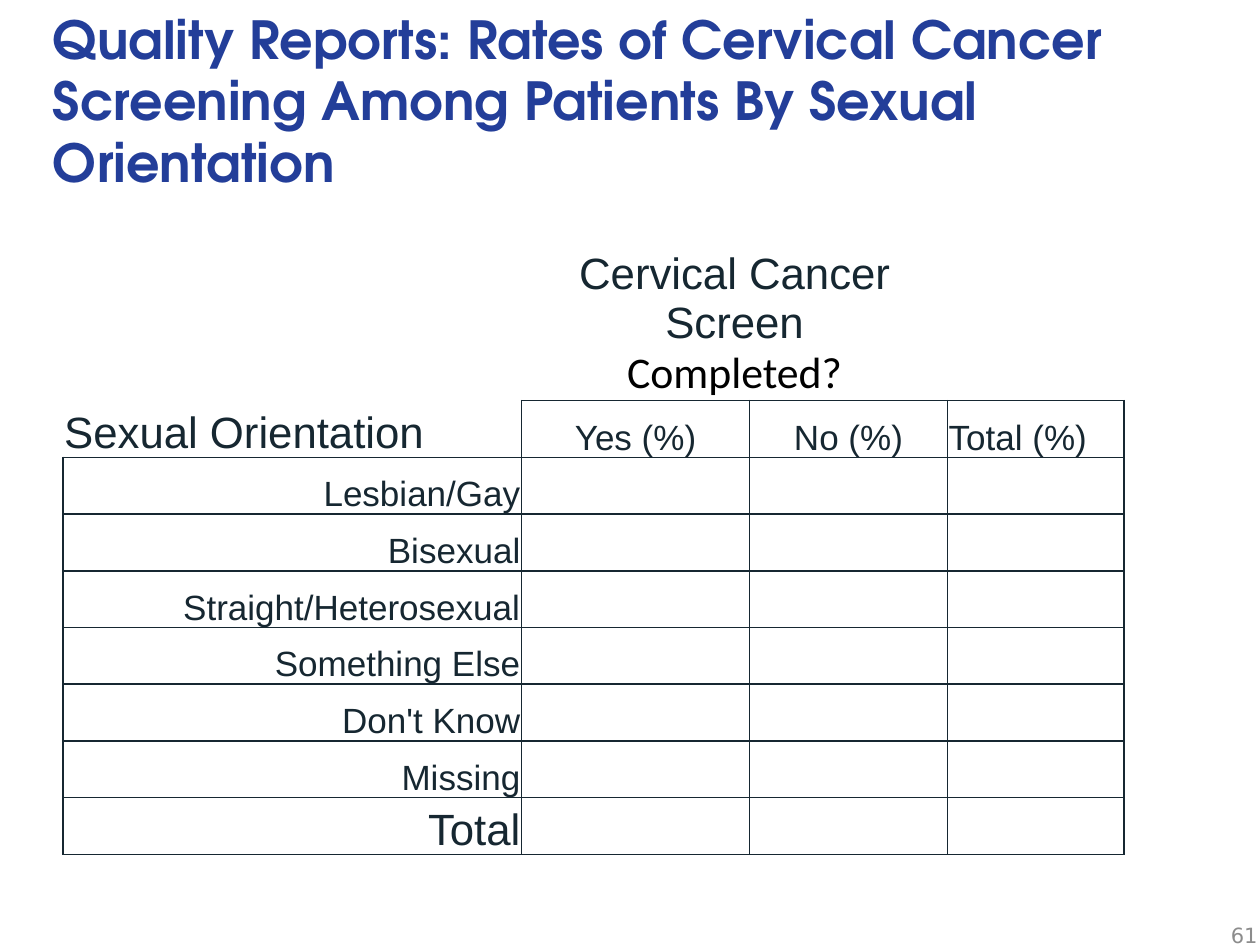
from lxml import etree
from pptx import Presentation
from pptx.dml.color import RGBColor
from pptx.enum.text import MSO_ANCHOR, MSO_AUTO_SIZE, PP_ALIGN
from pptx.oxml.ns import qn
from pptx.util import Inches, Pt

LEFT, CENTER, RIGHT = PP_ALIGN.LEFT, PP_ALIGN.CENTER, PP_ALIGN.RIGHT
BOTTOM = MSO_ANCHOR.BOTTOM
NO_AUTOFIT = MSO_AUTO_SIZE.NONE
TITLE_ONLY = 5
NO_TABLE_STYLE = "{2D5ABB26-0587-4C30-8999-92F81FD0307C}"

INK = "162731"
COLUMNS = (3.64, 1.81, 1.57, 1.4)
HEADER_HEIGHT, ROW_HEIGHT = 1.2, 0.45
HEADINGS = ("Yes (%)", "No (%)", "Total (%)")
ORIENTATIONS = ("Lesbian/Gay", "Bisexual", "Straight/Heterosexual",
                "Something Else", "Don't Know", "Missing", "Total")


def color(hex_string):
    return RGBColor.from_string(hex_string)


def style(paragraph, size, font_name, hex_string, bold=False, align=LEFT):
    paragraph.alignment = align
    font = paragraph.font
    font.size, font.name, font.bold = Pt(size), font_name, bold
    font.color.rgb = color(hex_string)


def add_title(slide, left, top, width, height):
    title = slide.shapes.title
    title.left, title.top = Inches(left), Inches(top)
    title.width, title.height = Inches(width), Inches(height)
    frame = title.text_frame
    frame.text = ("Quality Reports: Rates of Cervical Cancer Screening "
                  "Among Patients By Sexual Orientation")
    frame.word_wrap, frame.auto_size = True, NO_AUTOFIT
    frame.vertical_anchor = BOTTOM
    frame.margin_left = frame.margin_right = 0
    paragraph = frame.paragraphs[0]
    paragraph.line_spacing, paragraph.space_after = Pt(35), Pt(6)
    style(paragraph, 30, "TeX Gyre Adventor", "233E99", bold=True)


def add_page_number(slide, left, top, width, height):
    box = slide.shapes.add_textbox(Inches(left), Inches(top),
                                   Inches(width), Inches(height))
    box.text_frame.word_wrap = True
    box.text_frame.text = "61"
    style(box.text_frame.paragraphs[0], 12, "DejaVu Sans", "8C8C8C")


def set_borders(cell, sides):
    """Draw 1 pt lines on the named sides (L, R, T, B) and clear the rest."""
    properties = cell._tc.get_or_add_tcPr()
    for side in "LRTB":
        line = etree.SubElement(properties, qn(f"a:ln{side}"), w=str(Pt(1)))
        if side in sides:
            fill = etree.SubElement(line, qn("a:solidFill"))
            etree.SubElement(fill, qn("a:srgbClr"), val=INK)
        else:
            etree.SubElement(line, qn("a:noFill"))
    cell.fill.background()


def write_cell(cell, text, size, align):
    cell.text = text
    cell.vertical_anchor = BOTTOM
    cell.margin_left = cell.margin_right = cell.margin_top = Inches(0.01)
    cell.margin_bottom = 0
    for paragraph in cell.text_frame.paragraphs:
        style(paragraph, size, "Arial", INK, align=align)


def borders_for(row, column):
    if row == 0:
        return "B" if column else ""
    if row == 1 and column == 0:
        return "RB"
    return "LRTB"


def add_screening_table(slide, left, top):
    row_count = len(ORIENTATIONS) + 2
    height = HEADER_HEIGHT + ROW_HEIGHT * (row_count - 1)
    table = slide.shapes.add_table(
        row_count, len(COLUMNS), Inches(left), Inches(top),
        Inches(sum(COLUMNS)), Inches(height)).table
    table.first_row = table.horz_banding = False
    table._tbl.tblPr.find(qn("a:tableStyleId")).text = NO_TABLE_STYLE

    # Grid and borders
    for column, width in zip(table.columns, COLUMNS):
        column.width = Inches(width)
    for row_index, row in enumerate(table.rows):
        row.height = Inches(ROW_HEIGHT if row_index else HEADER_HEIGHT)
        for column_index, cell in enumerate(row.cells):
            set_borders(cell, borders_for(row_index, column_index))

    # Headings
    spanning = table.cell(0, 1)
    spanning.merge(table.cell(0, 2))
    write_cell(spanning, "Cervical Cancer Screen\nCompleted?", 25, CENTER)
    style(spanning.text_frame.paragraphs[1], 25, "Calibri", "000000", align=CENTER)
    write_cell(table.cell(1, 0), "Sexual Orientation", 25, LEFT)
    for column_index, heading in enumerate(HEADINGS, 1):
        align = LEFT if heading == "Total (%)" else CENTER
        write_cell(table.cell(1, column_index), heading, 20, align)

    # Row labels
    for row_index, label in enumerate(ORIENTATIONS, 2):
        size = 25 if label == "Total" else 20
        write_cell(table.cell(row_index, 0), label, size, RIGHT)


def main():
    presentation = Presentation()
    presentation.slide_width, presentation.slide_height = Inches(10), Inches(7.5)
    slide = presentation.slides.add_slide(presentation.slide_layouts[TITLE_ONLY])
    add_title(slide, 0.42, 0.33, 9.42, 1.25)
    add_page_number(slide, 9.67, 7.27, 0.67, 0.4)
    add_screening_table(slide, 0.5, 1.92)
    presentation.save("out.pptx")


if __name__ == "__main__":
    main()
